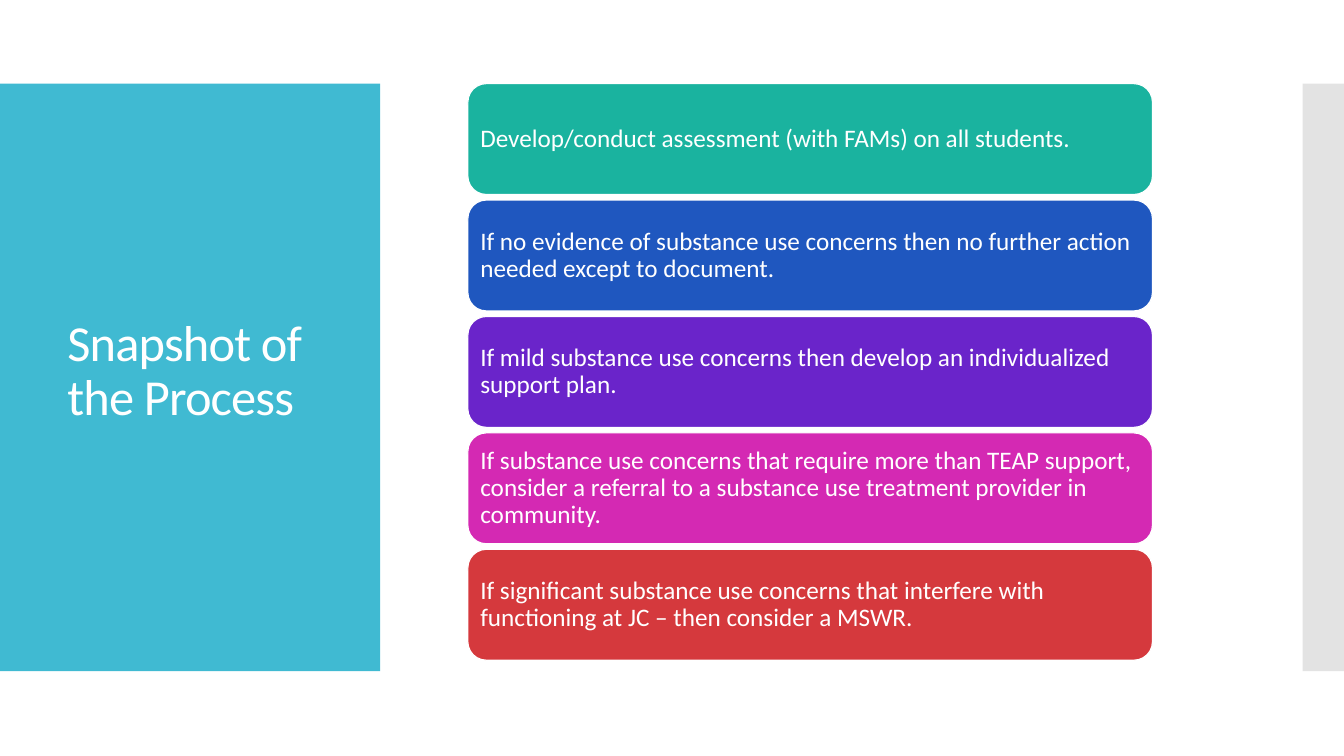
from lxml import etree
from pptx import Presentation
from pptx.dml.color import RGBColor
from pptx.enum import shapes, text
from pptx.oxml import ns
from pptx.util import Inches, Pt

COLORS = {
    "band": "40BAD2", "edge": "C8C8C8", "white": "FFFFFF",
    "teal": "1AB39F", "blue": "1F57BF", "purple": "6A24CA",
    "pink": "D429B3", "red": "D5393D",
}
STEPS = [
    ("teal", "Develop/conduct assessment (with FAMs) on all students."),
    ("blue", "If no evidence of substance use concerns then no further action "
             "needed except to document."),
    ("purple", "If mild substance use concerns then develop an individualized "
               "support plan."),
    ("pink", "If substance use concerns that require more than TEAP support, "
             "consider a referral to a substance use treatment provider in community."),
    ("red", "If significant substance use concerns that interfere with "
            "functioning at JC – then consider a MSWR."),
]


def rgb(name):
    return RGBColor.from_string(COLORS[name])


def add_block(slide, kind, box, color):
    """Add a filled shape without outline or shadow; box is in inches."""
    block = slide.shapes.add_shape(kind, *map(Inches, box))
    block.shadow.inherit = False
    block.fill.solid()
    block.fill.fore_color.rgb = rgb(color)
    block.line.fill.background()
    return block


def start_paragraph(frame, margin):
    """Prepare a wrapped, vertically centred frame and return its paragraph."""
    frame.word_wrap = True
    frame.vertical_anchor = text.MSO_ANCHOR.MIDDLE
    frame.margin_left = frame.margin_right = Inches(margin)
    paragraph = frame.paragraphs[0]
    paragraph.alignment = text.PP_ALIGN.LEFT
    paragraph.line_spacing = 0.9
    return paragraph


def add_run(paragraph, words, size):
    run = paragraph.add_run()
    run.text = words
    run.font.name = "Calibri"
    run.font.size = Pt(size)
    run.font.color.rgb = rgb("white")
    return run


def add_title_band(slide, box, lines):
    left, top, width, height = box
    add_block(slide, shapes.MSO_SHAPE.RECTANGLE, box, "band")
    title = slide.shapes.add_textbox(
        Inches(left + 0.57), Inches(top - 0.15), Inches(width - 0.57), Inches(height + 0.19))
    paragraph = start_paragraph(title.text_frame, 0.1)
    for index, line in enumerate(lines):
        if index:
            paragraph.add_line_break()
        run = add_run(paragraph, line, 36)
        run.font._element.set("spc", "-60")


def add_edge_strip(slide, box):
    strip = add_block(slide, shapes.MSO_SHAPE.RECTANGLE, box, "edge")
    color = strip.fill._xPr.find(".//" + ns.qn("a:srgbClr"))
    etree.SubElement(color, ns.qn("a:alpha"), val="50000")


def add_steps(slide, box, steps, card_height=1.1):
    """Stack the step cards evenly from the top to the bottom of the box."""
    left, top, width, height = box
    pitch = (height - card_height) / (len(steps) - 1)
    for index, (color, words) in enumerate(steps):
        card = add_block(slide, shapes.MSO_SHAPE.ROUNDED_RECTANGLE,
                         (left, top + index * pitch, width, card_height), color)
        card.line.color.rgb = rgb("white")
        card.line.width = Pt(0.85)
        add_run(start_paragraph(card.text_frame, 0.07), words, 18)


def main():
    deck = Presentation()
    deck.slide_width, deck.slide_height = Inches(13.33), Inches(7.5)
    slide = deck.slides.add_slide(deck.slide_layouts[6])
    add_title_band(slide, (0, 0.83, 3.77, 5.83), ["Snapshot of", "the Process"])
    add_edge_strip(slide, (12.92, 0.83, 0.41, 5.83))
    add_steps(slide, (4.64, 0.83, 6.79, 5.72), STEPS)
    deck.save("out.pptx")


if __name__ == "__main__":
    main()
